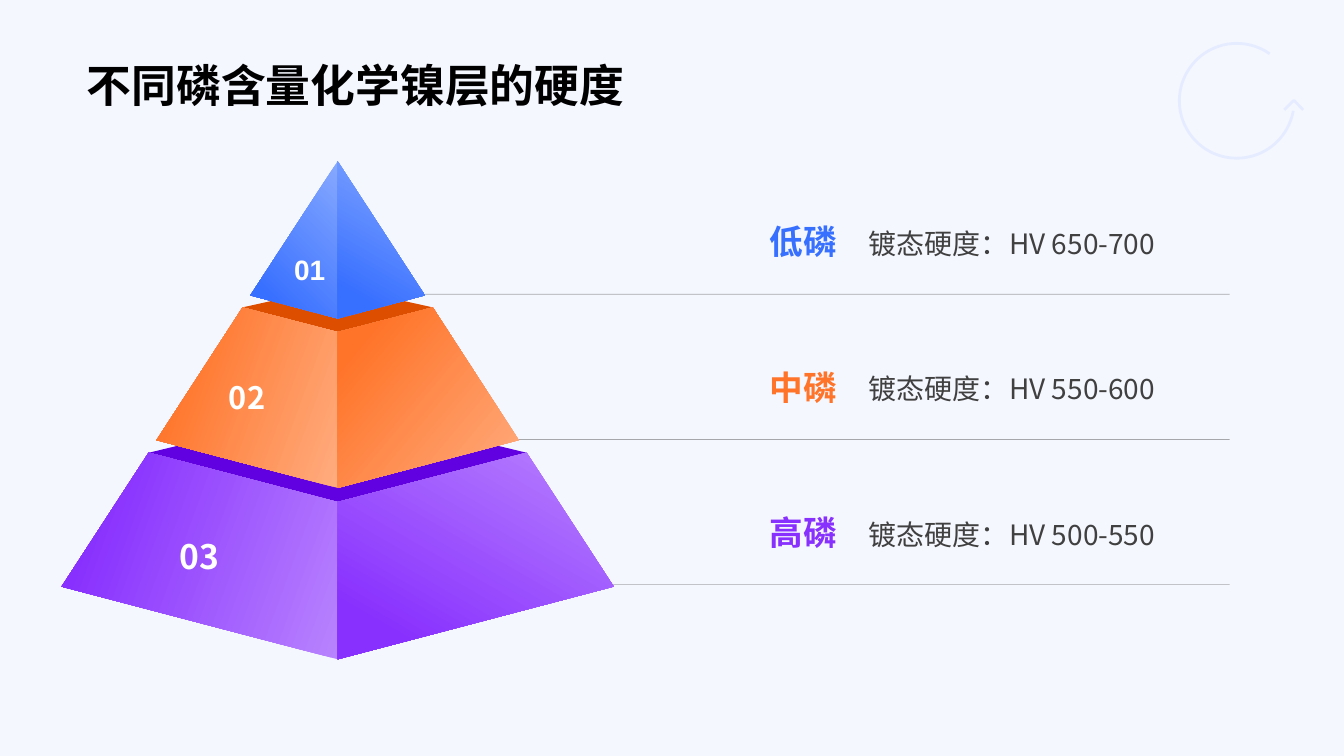
from lxml import etree
from pptx import Presentation
from pptx.dml.color import RGBColor
from pptx.enum.shapes import MSO_CONNECTOR, MSO_SHAPE
from pptx.enum.text import MSO_ANCHOR, PP_ALIGN
from pptx.oxml.ns import qn
from pptx.util import Pt

LINE, ARC = MSO_CONNECTOR.STRAIGHT, MSO_SHAPE.ARC
MID = MSO_ANCHOR.MIDDLE
LEFT, RIGHT, CENTER = PP_ALIGN.LEFT, PP_ALIGN.RIGHT, PP_ALIGN.CENTER

BACK = RGBColor(0xF5, 0xF7, 0xFF)
BLACK = RGBColor(0, 0, 0)
WHITE = RGBColor(0xFF, 0xFF, 0xFF)
GRAY = RGBColor(0x59, 0x59, 0x59)
DARK = RGBColor(0x40, 0x40, 0x40)
BLUE = RGBColor(0x37, 0x6F, 0xFF)
SKY = RGBColor(0x87, 0xA9, 0xFF)
ORANGE = RGBColor(0xFF, 0x74, 0x29)
PEACH = RGBColor(0xFF, 0xAC, 0x7F)
RUST = RGBColor(0xDE, 0x4E, 0x00)
PURPLE = RGBColor(0x88, 0x30, 0xFE)
LILAC = RGBColor(0xB8, 0x83, 0xFE)
VIOLET = RGBColor(0x61, 0x01, 0xE1)
SANS, NOTO = "Arial", "Noto Sans CJK SC"

# Content, from the top tier down
TITLE = "不同磷含量化学镍层的硬度"
ROWS = [
    ("低磷", "镀态硬度：HV 650-700", BLUE),
    ("中磷", "镀态硬度：HV 550-600", ORANGE),
    ("高磷", "镀态硬度：HV 500-550", PURPLE),
]
# Tier: number, size, font, insets (left, top), light, full colour, angles (left, right),
# upper edge (half width, side y, centre y), lower edge (the same)
TIERS = [
    ("01", 20, SANS, (22.3, 42.5), SKY, BLUE, (135, 120),
     (0, 115.2, 115.2), (62.3, 211, 227.5)),
    ("02", 22, NOTO, (0, 0), PEACH, ORANGE, (200, 220),
     (67.9, 219.6, 237.2), (129.4, 314.4, 348.5)),
    ("03", 24, NOTO, (0, 0), LILAC, PURPLE, (200, 120),
     (135, 323.3, 358.6), (197.2, 419, 470.9)),
]
# Lid: half width, top, side and bottom y, colour
LIDS = [(68, 204.5, 219.6, 239, RUST), (134.8, 290.9, 323.4, 360, VIOLET)]
AXIS = 241.2
RULE, STEP = 210.2, 103.7

deck = Presentation()
deck.slide_width, deck.slide_height = Pt(960), Pt(540)
slide = deck.slides.add_slide(deck.slide_layouts[5])
slide.background.fill.solid()
slide.background.fill.fore_color.rgb = BACK
shapes = slide.shapes


def write(shape, text, size, face, color, bold=True, align=LEFT,
          inset=(0, 0, 0, 0), wrap=True):
    frame = shape.text_frame
    frame.text = text
    frame.word_wrap = wrap
    frame.vertical_anchor = MID
    (frame.margin_left, frame.margin_top,
     frame.margin_right, frame.margin_bottom) = map(Pt, inset)
    par = frame.paragraphs[0]
    par.alignment = align
    font = par.font
    font.size, font.bold, font.name = Pt(size), bold, face
    font.color.rgb = color
    props = par._p.pPr.find(qn("a:defRPr"))
    etree.SubElement(props, qn("a:ea")).set("typeface", NOTO)
    return par


def label(x, y, w, h, *args, **opts):
    box = shapes.add_textbox(Pt(x), Pt(y), Pt(w), Pt(h))
    return write(box, *args, **opts)


def outline(points, close=True):
    spots = [(Pt(x), Pt(y)) for x, y in points]
    pen = shapes.build_freeform(*spots[0], scale=1.0)
    pen.add_line_segments(spots[1:], close=close)
    shape = pen.convert_to_shape()
    shape.shadow.inherit = False
    shape.line.fill.background()
    return shape


def stroke(shape, color, width, alpha):
    shape.line.color.rgb = color
    shape.line.width = Pt(width)
    tint = shape.line._ln.find(".//" + qn("a:srgbClr"))
    etree.SubElement(tint, qn("a:alpha")).set("val", str(alpha * 1000))


# Corner ring with an open arrowhead
ring = shapes.add_shape(ARC, Pt(842.4), Pt(31), Pt(82), Pt(82))
ring.shadow.inherit = False
ring.adjustments[0], ring.adjustments[1] = 10 * 0.6, 305 * 0.6
ring.fill.background()
ring.adjustments[0], ring.adjustments[1] = 10 * 6, 305 * 0.6
ring.adjustments[0], ring.adjustments[1] = 6, 183
tip = outline([(931, 78.5), (924.2, 71.7), (917.3, 78.5)], close=False)
tip.fill.background()
for part in (ring, tip):
    stroke(part, BLUE, 2, 8)

# Title
title = shapes.title
title.left, title.top, title.width, title.height = map(Pt, (54.7, 31.7, 850.3, 56.9))
write(title, TITLE, 32, SANS, BLACK, inset=(7.2, 3.6, 7.2, 3.6))

# Rows: rule, name and hardness
for i, (name, value, color) in enumerate(ROWS):
    y = RULE + i * STEP
    rule = shapes.add_connector(LINE, Pt(270), Pt(y), Pt(878.4), Pt(y))
    stroke(rule, GRAY, 0.5, 50)
    etree.SubElement(rule._element.spPr, qn("a:effectLst"))
    label(437.8, y - 66.2, 159.8, 56.9, name, 24, NOTO, color, align=RIGHT)
    par = label(620.6, y - 66.9, 270, 56.9, value, 20, NOTO, DARK,
                bold=False, inset=(0, 0, 0, 2.9))
    par.line_spacing = 1.3

# Lids between the tiers
for half, top, side, low, color in LIDS:
    lid = outline([(AXIS - half, side), (AXIS, top), (AXIS + half, side), (AXIS, low)])
    lid.fill.solid()
    lid.fill.fore_color.rgb = color

# Pyramid faces, left and right of the axis
for num, size, face, (left, top), light, full, turns, upper, lower in TIERS:
    for sign, turn in zip((-1, 1), turns):
        side = outline([
            (AXIS + sign * upper[0], upper[1]), (AXIS, upper[2]),
            (AXIS, lower[2]), (AXIS + sign * lower[0], lower[1])])
        side.fill.gradient()
        side.fill.gradient_angle = 360 - turn
        for stop, color, place in zip(side.fill.gradient_stops, (light, full), (0, 0.85)):
            stop.color.rgb, stop.position = color, place
        if sign < 0:
            write(side, num, size, face, WHITE, align=CENTER,
                  inset=(left, top, 0, 0), wrap=False)

deck.save("out.pptx")
